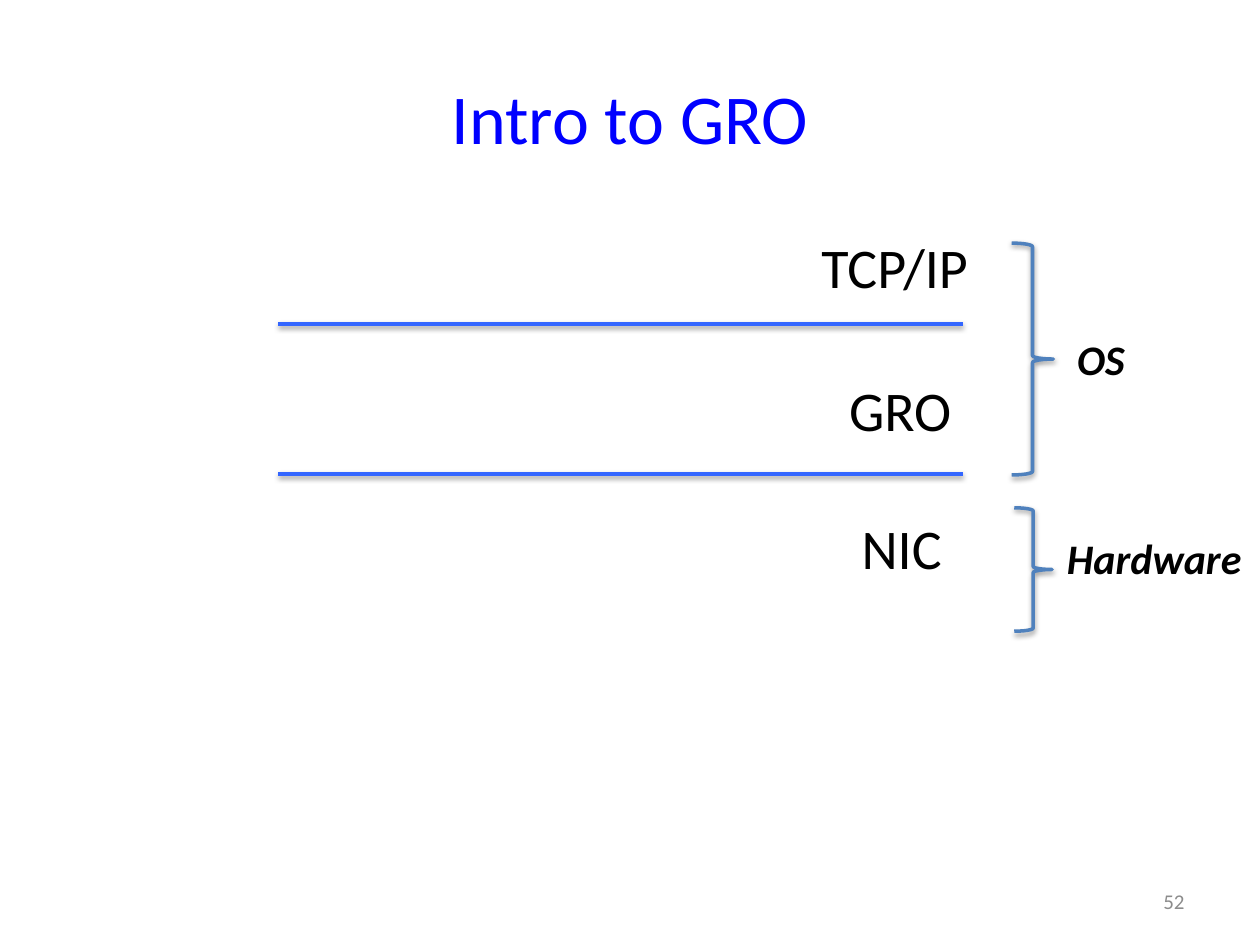
from dataclasses import dataclass

from lxml.etree import SubElement as Sub
from pptx import Presentation
from pptx.dml.color import RGBColor as Rgb
from pptx.enum.shapes import MSO_CONNECTOR as Link, MSO_SHAPE as Form
from pptx.enum.text import MSO_ANCHOR as Anchor, MSO_AUTO_SIZE as Fit, PP_ALIGN as Align
from pptx.oxml.ns import qn
from pptx.util import Inches, Pt

# The slide is a grid of 100 columns by 75 rows
WIDE, HIGH = Inches(10), Inches(7.5)
COLS, ROWS = 100, 75
BLACK, BLUE, RULE, STEEL, GREY = "000000", "0000FF", "3366FF", "4F81BD", "8C8C8C"


@dataclass
class Box:
    col: float
    row: float
    cols: float
    rows: float


@dataclass
class Label:
    text: str
    box: Box
    size: int
    hue: str = BLACK
    bold: bool = False
    align: Align = Align.LEFT
    fixed: bool = False  # fixed boxes wrap and centre their text vertically


def col(n: float) -> int:
    return round(WIDE * n / COLS)


def row(n: float) -> int:
    return round(HIGH * n / ROWS)


def place(box: Box) -> tuple[int, int, int, int]:
    return col(box.col), row(box.row), col(box.cols), row(box.rows)


def paint(target, hue: str) -> None:
    target.rgb = Rgb.from_string(hue)


def ink(shape, hue: str) -> None:
    """Give a shape its line and a soft shadow straight below."""
    paint(shape.line.color, hue)
    shape.line.width = Pt(2)
    effects = Sub(shape._element.spPr, qn("a:effectLst"))
    shade = Sub(effects, qn("a:outerShdw"), blurRad=str(Pt(3.1)),
                dist=str(Pt(1.6)), dir="5400000", rotWithShape="0")
    tone = Sub(shade, qn("a:srgbClr"), val=BLACK)
    Sub(tone, qn("a:alpha"), val="38000")


def rule(slide, y: float) -> None:
    line = slide.shapes.add_connector(
        Link.STRAIGHT, col(22.1), row(y), col(76.4), row(y))
    ink(line, RULE)


def brace(slide, box: Box) -> None:
    shape = slide.shapes.add_shape(Form.RIGHT_BRACE, *place(box))
    shape.fill.background()
    ink(shape, STEEL)


def write(slide, label: Label) -> None:
    frame = slide.shapes.add_textbox(*place(label.box)).text_frame
    frame.text = label.text
    frame.word_wrap = label.fixed
    frame.auto_size = Fit.NONE if label.fixed else Fit.SHAPE_TO_FIT_TEXT
    frame.vertical_anchor = Anchor.MIDDLE if label.fixed else Anchor.TOP
    para = frame.paragraphs[0]
    para.alignment = label.align
    font = para.runs[0].font
    font.name, font.size = "Calibri", Pt(label.size)
    font.bold = font.italic = label.bold
    paint(font.color, label.hue)


LABELS = [
    Label("Intro to GRO", Box(5, 3, 90, 12.5), 40, BLUE, align=Align.CENTER, fixed=True),
    # Layers of the stack
    Label("TCP/IP", Box(64.2, 18, 14.1, 6.4), 32),
    Label("GRO", Box(66.4, 29.3, 10.3, 6.4), 32),
    Label("NIC", Box(67.4, 40.3, 8.4, 6.4), 32),
    # Where the layers run
    Label("OS", Box(84.5, 26, 6.6, 5), 24, bold=True),
    Label("Hardware", Box(83.7, 41.8, 17, 5), 24, bold=True),
    # Page number
    Label("52", Box(71.7, 69.5, 23.3, 4), 12, GREY, align=Align.RIGHT, fixed=True),
]
RULES = [25.7, 37.6]
BRACES = [Box(80.3, 19.3, 3.3, 18.4), Box(80.5, 40.3, 3, 9.8)]


def main() -> None:
    deck = Presentation()
    deck.slide_width, deck.slide_height = WIDE, HIGH
    slide = deck.slides.add_slide(deck.slide_layouts[6])
    for y in RULES:
        rule(slide, y)
    for box in BRACES:
        brace(slide, box)
    for label in LABELS:
        write(slide, label)
    deck.save("out.pptx")


if __name__ == "__main__":
    main()
